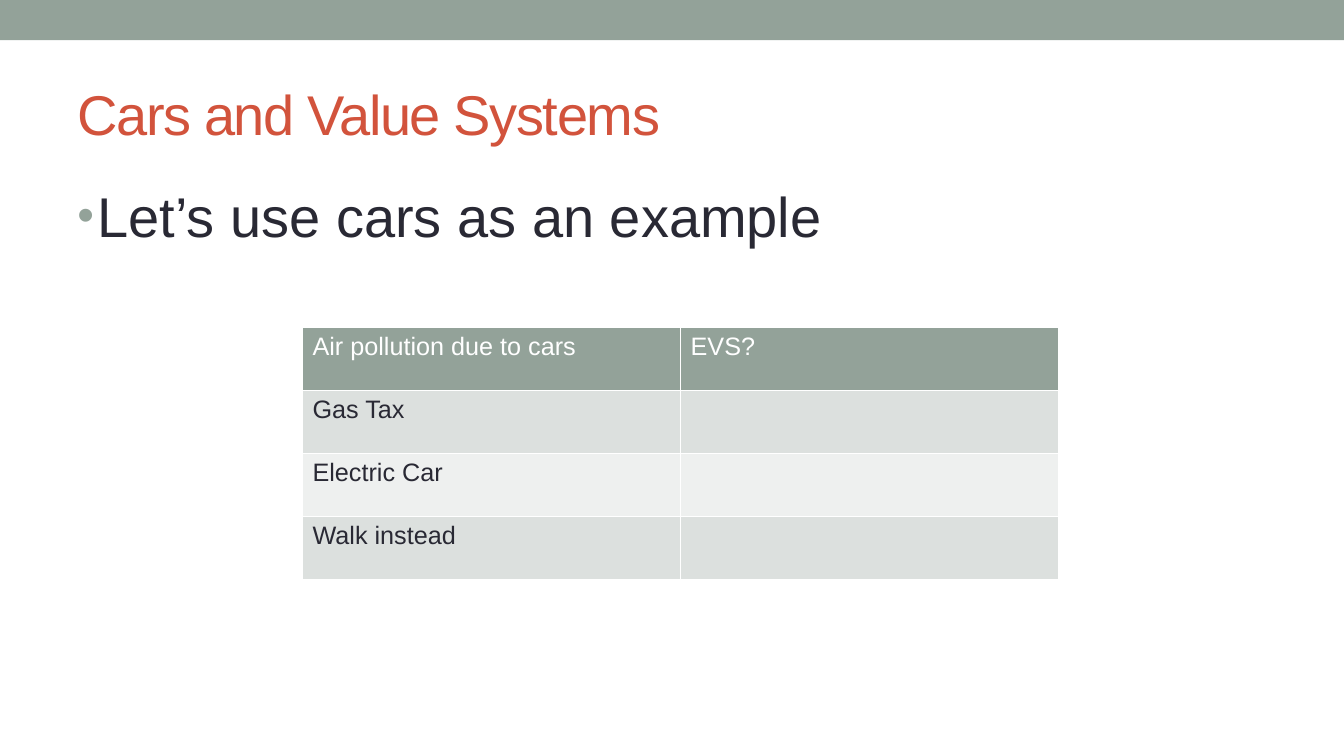
from dataclasses import dataclass

from lxml import etree
from pptx import Presentation
from pptx.dml.color import RGBColor
from pptx.enum.shapes import MSO_SHAPE
from pptx.enum.text import MSO_ANCHOR
from pptx.oxml.ns import qn
from pptx.util import Inches, Pt

RECTANGLE = MSO_SHAPE.RECTANGLE
MIDDLE, TOP = MSO_ANCHOR.MIDDLE, MSO_ANCHOR.TOP


@dataclass(frozen=True)
class Theme:
    font: str = "Arial"
    sage: str = "93A299"
    rust: str = "D2533C"
    ink: str = "292934"
    white: str = "FFFFFF"
    bands: tuple = ("DCE0DE", "EEF0EF")
    heading_size: int = 40
    table_size: int = 18
    border_width: int = 1


THEME = Theme()

TABLE_ROWS = [
    ("Air pollution due to cars", "EVS?"),
    ("Gas Tax", ""),
    ("Electric Car", ""),
    ("Walk instead", ""),
]


def style_font(para, size, color):
    para.font.name = THEME.font
    para.font.size = Pt(size)
    para.font.color.rgb = RGBColor.from_string(color)


def add_color(parent, color):
    etree.SubElement(parent, qn("a:srgbClr"), val=color)


def add_band(page, left, top, width, height):
    band = page.shapes.add_shape(
        RECTANGLE, Inches(left), Inches(top), Inches(width), Inches(height))
    band.shadow.inherit = False
    band.fill.solid()
    band.fill.fore_color.rgb = RGBColor.from_string(THEME.sage)
    band.line.fill.background()


def add_text(page, left, top, width, height, text, color, anchor):
    box = page.shapes.add_textbox(
        Inches(left), Inches(top), Inches(width), Inches(height))
    frame = box.text_frame
    frame.word_wrap = True
    frame.vertical_anchor = anchor
    para = frame.paragraphs[0]
    para.text = text
    style_font(para, THEME.heading_size, color)
    return para


def add_title(page, left, top, width, height, text):
    para = add_text(page, left, top, width, height, text, THEME.rust, MIDDLE)
    # Tighten the letters by one point
    para.runs[0].font._element.set("spc", "-100")


def add_bullet(page, left, top, width, height, text):
    para = add_text(page, left, top, width, height, text, THEME.ink, TOP)
    para.space_before = Pt(8)
    # Hanging bullet
    props = para._p.get_or_add_pPr()
    indent = Inches(0.2)
    props.set("marL", str(indent))
    props.set("indent", str(-indent))
    marker_color = etree.Element(qn("a:buClr"))
    add_color(marker_color, THEME.sage)
    marker_size = etree.Element(qn("a:buSzPct"), val="85000")
    marker_font = etree.Element(qn("a:buFont"), typeface=THEME.font)
    marker = etree.Element(qn("a:buChar"), char="•")
    position = props.index(props.find(qn("a:spcBef"))) + 1
    props[position:position] = [marker_color, marker_size, marker_font, marker]


def add_borders(cell):
    props = cell._tc.get_or_add_tcPr()
    for index, side in enumerate(("lnL", "lnR", "lnT", "lnB")):
        line = etree.Element(
            qn(f"a:{side}"), w=str(Pt(THEME.border_width)))
        add_color(etree.SubElement(line, qn("a:solidFill")), THEME.white)
        props.insert(index, line)


def add_values_table(page, left, top, width, height, rows):
    table = page.shapes.add_table(
        len(rows), len(rows[0]),
        Inches(left), Inches(top), Inches(width), Inches(height)).table
    for row_index, row in enumerate(rows):
        is_header = row_index == 0
        fill = THEME.sage if is_header else THEME.bands[(row_index - 1) % 2]
        for column_index, text in enumerate(row):
            cell = table.cell(row_index, column_index)
            cell.fill.solid()
            cell.fill.fore_color.rgb = RGBColor.from_string(fill)
            para = cell.text_frame.paragraphs[0]
            para.text = text
            style_font(para, THEME.table_size,
                       THEME.white if is_header else THEME.ink)
            para.font.bold = False
            add_borders(cell)


def main():
    deck = Presentation()
    deck.slide_width, deck.slide_height = Inches(13.33), Inches(7.5)
    page = deck.slides.add_slide(deck.slide_layouts[6])
    add_band(page, 0, 0, 13.33, 0.4)
    add_title(page, 0.67, 0.58, 12, 1.08, "Cars and Value Systems")
    add_bullet(page, 0.67, 1.75, 12, 5.33, "Let’s use cars as an example")
    add_values_table(page, 3, 3.25, 7.5, 2.5, TABLE_ROWS)
    deck.save("out.pptx")


if __name__ == "__main__":
    main()
